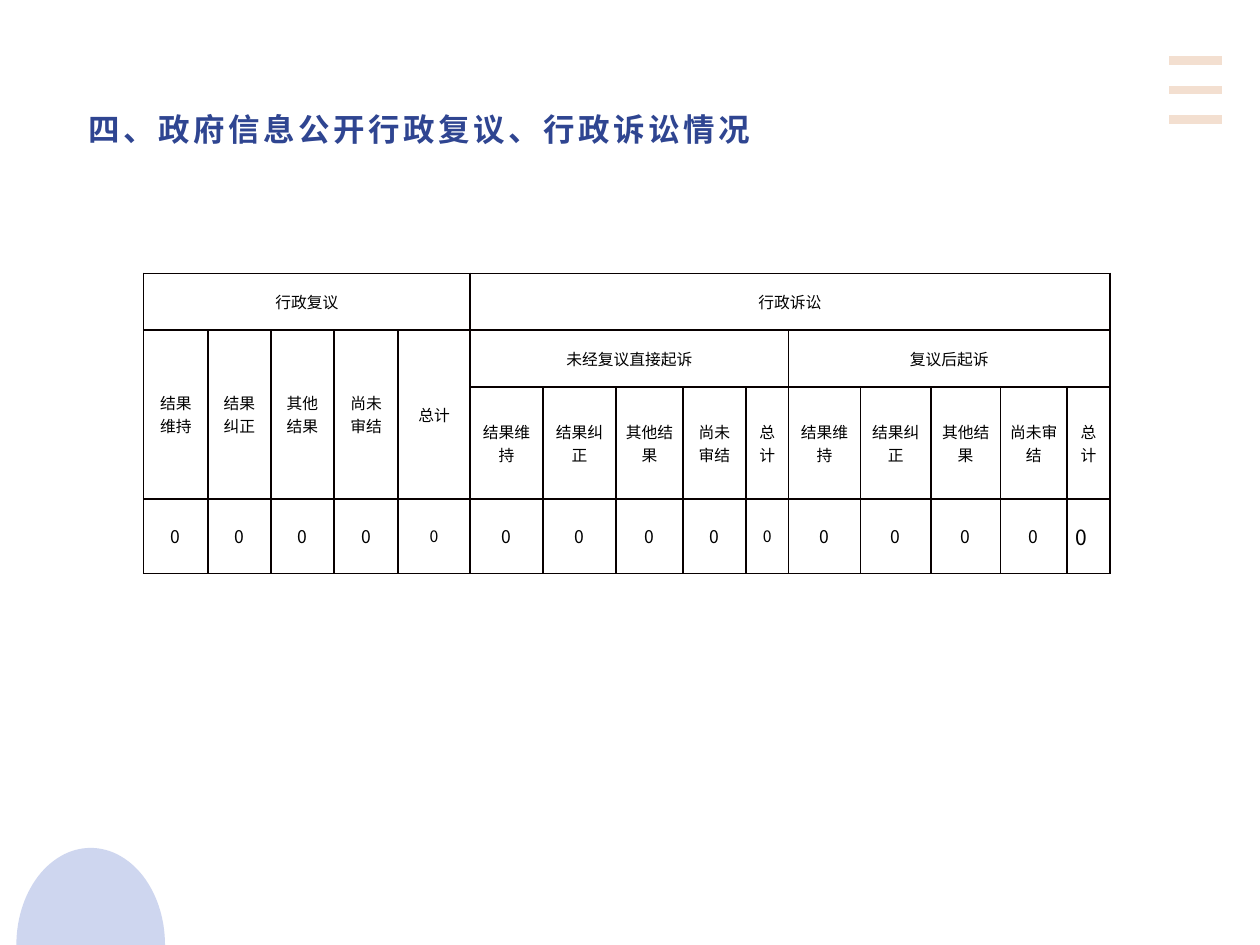
from math import cos, pi, sin

from lxml.etree import SubElement
from pptx import Presentation
from pptx.dml.color import RGBColor
from pptx.enum.shapes import MSO_CONNECTOR as Connector
from pptx.enum.text import MSO_ANCHOR as Anchor, PP_ALIGN as Align
from pptx.oxml.ns import qn
from pptx.util import Inches, Pt

CJK_FONT = "Noto Sans CJK SC"
COLUMNS = [0.51, 0.5, 0.5, 0.51, 0.57, 0.58, 0.58, 0.53, 0.5, 0.34,
           0.57, 0.56, 0.55, 0.53, 0.34]
ROWS = [0.45, 0.45, 0.89, 0.59]
OUTCOMES = ["结果维持", "结果纠正", "其他结果", "尚未审结", "总计"]
ZERO_SIZES = [10, 10, 10, 10, 9] * 2 + [10, 10, 10, 10, 12]


def paint(color_format, value):
    """Apply a hex colour to a fill's or font's colour."""
    color_format.rgb = RGBColor.from_string(value)


def write(frame, text, size=9, font=CJK_FONT, color="000000", bold=False,
          align=Align.CENTER, spacing=0):
    """Write one formatted paragraph into a text frame."""
    para = frame.paragraphs[0]
    para.alignment = align
    span = para.add_run()
    span.text = text
    span.font.size, span.font.name, span.font.bold = Pt(size), font, bold
    paint(span.font.color, color)
    properties = span.font._element
    SubElement(properties, qn("a:ea"), typeface=CJK_FONT)
    if spacing:
        properties.set("spc", str(spacing * 100))


def add_title(page, left, top, width, height):
    """Place the heading in the title placeholder."""
    title = page.shapes.title
    title.left, title.top = Inches(left), Inches(top)
    title.width, title.height = Inches(width), Inches(height)
    frame = title.text_frame
    frame.margin_left, frame.margin_right = Inches(0.11), Inches(0.08)
    frame.margin_top = frame.margin_bottom = Inches(0.04)
    frame.vertical_anchor = Anchor.MIDDLE
    write(frame, "四、政府信息公开行政复议、行政诉讼情况", size=18, font="Arial",
          color="2F4591", bold=True, align=Align.LEFT, spacing=2)


def add_bars(page, left, top, width, height):
    """Draw three evenly spaced bars in the corner."""
    for index in range(3):
        y = Inches(top + index * height / 2)
        bar = page.shapes.add_connector(
            Connector.STRAIGHT, Inches(left), y, Inches(left + width), y)
        bar.line.width = Pt(5)
        paint(bar.line.fill_color if hasattr(bar.line, "fill_color")
              else bar.line.color, "F3DFD0")
        SubElement(bar._element.spPr, qn("a:effectLst"))


def add_dome(page, left, top, width, height, steps=60):
    """Draw a translucent half ellipse resting on the page's lower edge."""
    radius = width / 2
    points = [(Inches(left + radius - radius * cos(pi * step / steps)),
               Inches(top + height - height * sin(pi * step / steps)))
              for step in range(steps + 1)]
    builder = page.shapes.build_freeform(*points[0])
    builder.add_line_segments(points[1:], close=True)
    dome = builder.convert_to_shape()
    dome.shadow.inherit = False
    dome.line.fill.background()
    dome.fill.solid()
    paint(dome.fill.fore_color, "9FAEE0")
    color = dome._element.spPr.find(qn("a:solidFill"))[0]
    SubElement(color, qn("a:alpha"), val="50000")


def style_cell(cell):
    """Give a cell thin borders, tight margins and no fill."""
    properties = cell._tc.get_or_add_tcPr()
    for side in ("lnL", "lnR", "lnT", "lnB"):
        border = SubElement(properties, qn(f"a:{side}"), w=str(Pt(1)))
        fill = SubElement(border, qn("a:solidFill"))
        SubElement(fill, qn("a:srgbClr"), val="080000")
    cell.fill.background()
    cell.margin_left = cell.margin_right = Inches(0.07)
    cell.margin_top = cell.margin_bottom = 0
    cell.vertical_anchor = Anchor.MIDDLE


def add_case_table(page, left, top, width, height):
    """Build the table of review and litigation results."""
    table = page.shapes.add_table(
        len(ROWS), len(COLUMNS), Inches(left), Inches(top),
        Inches(width), Inches(height)).table
    table.first_row = table.horz_banding = False
    for column, size in zip(table.columns, COLUMNS):
        column.width = Inches(size)
    for row, size in zip(table.rows, ROWS):
        row.height = Inches(size)
    for cell in table.iter_cells():
        style_cell(cell)

    headings = [("行政复议", 0, 0, 0, 4), ("行政诉讼", 0, 5, 0, 14),
                ("未经复议直接起诉", 1, 5, 1, 9), ("复议后起诉", 1, 10, 1, 14)]
    headings += [(text, 1, column, 2, column)
                 for column, text in enumerate(OUTCOMES)]
    for text, row, column, last_row, last_column in headings:
        cell = table.cell(row, column)
        cell.merge(table.cell(last_row, last_column))
        write(cell.text_frame, text)
    for column, text in enumerate(OUTCOMES * 2, start=5):
        write(table.cell(2, column).text_frame, text)
    last = len(COLUMNS) - 1
    for column, size in enumerate(ZERO_SIZES):
        write(table.cell(3, column).text_frame, "0", size=size,
              align=Align.LEFT if column == last else Align.CENTER)


def main():
    """Create the deck and save it."""
    deck = Presentation()
    deck.slide_width, deck.slide_height = Inches(10), Inches(7.5)
    page = deck.slides.add_slide(deck.slide_layouts[5])
    add_bars(page, 9.28, 0.48, 0.42, 0.47)
    add_dome(page, 0.13, 6.73, 1.18, 0.77)
    add_title(page, 0.59, 0.84, 8.9, 0.36)
    add_case_table(page, 1.14, 2.17, 7.66, 2.38)
    deck.save("out.pptx")


if __name__ == "__main__":
    main()
